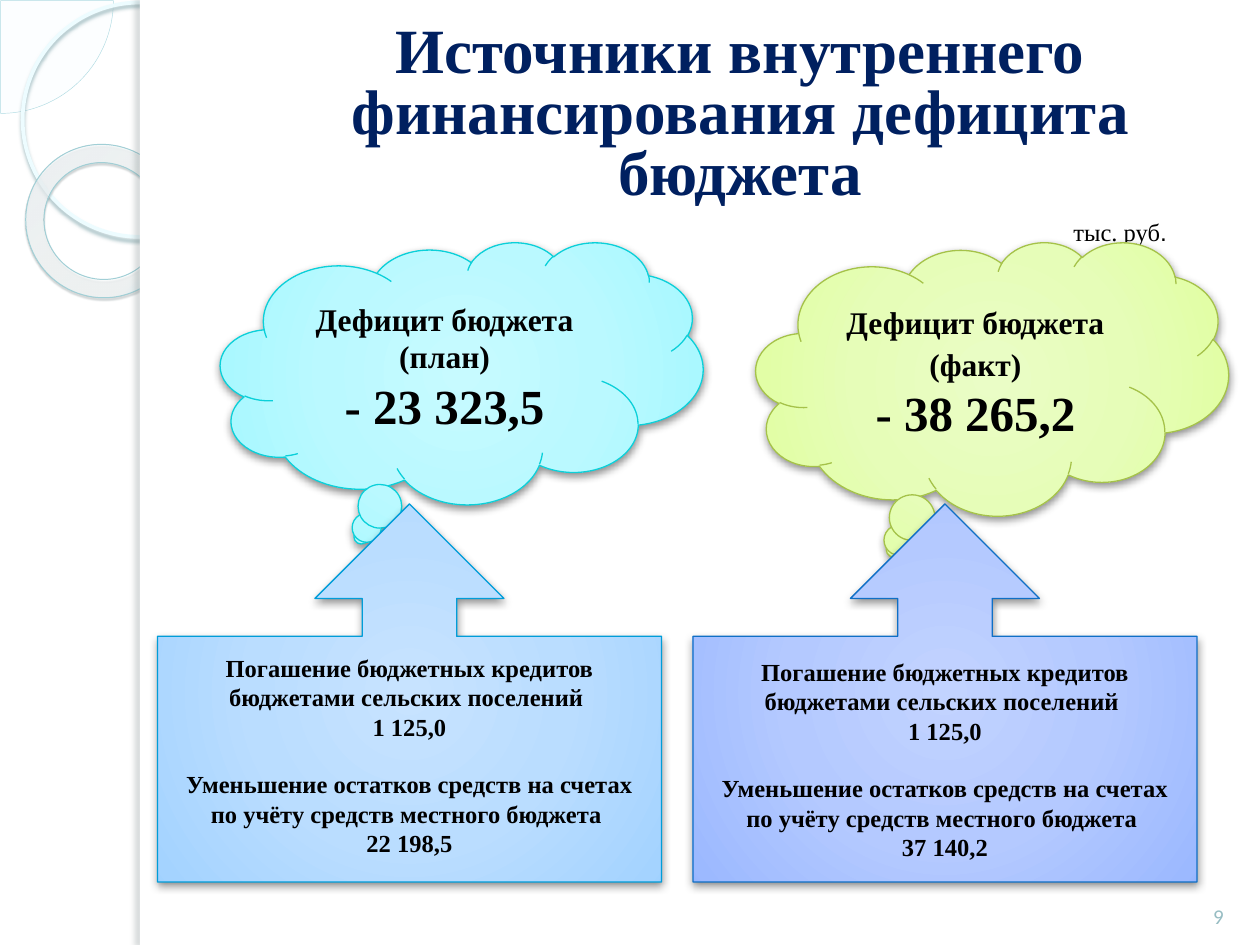
from dataclasses import dataclass

from lxml import etree
from pptx import Presentation
from pptx import util as u
from pptx.dml.color import RGBColor
from pptx.enum import shapes, text
from pptx.oxml.ns import qn

Inches, Pt = u.Inches, u.Pt
Kind = shapes.MSO_SHAPE
CENTER = text.PP_ALIGN.CENTER
MIDDLE = text.MSO_ANCHOR.MIDDLE
CENTRE_FOCUS = (50, 50, 50, 50)


@dataclass(frozen=True)
class Theme:
    serif: str = "Times New Roman"
    sans: str = "Calibri"
    symbol: str = "Arial"
    white: str = "FFFFFF"
    black: str = "000000"
    title: str = "002060"
    number: str = "97BDC3"
    title_size: int = 36
    amount_size: int = 28
    heading_size: int = 18
    body_size: int = 14
    number_size: int = 12
    # outline colour, then gradient colours from the centre outwards
    cyan: tuple = ("0BD0D9", "C7FAFF", "BAF9FF", "A5F8FF", "9EF7FF")
    green: tuple = ("A5C249", "EAFDC6", "E6FDB8", "E0FF9F", "DEFF98")
    sky: tuple = ("009DD9", "C7E3FF", "BADDFF", "A4D3FF", "9ED0FF")
    blue: tuple = ("0F6FC6", "C2D3FF", "B4C9FF", "9CB9FF", "95B4FF")
    # colour, opacity %, blur pt, distance pt, direction in degrees
    soft_shadow: tuple = ("000000", 43, 5, 2, 90)


def add_color(parent, color, opacity):
    element = etree.SubElement(parent, qn("a:srgbClr"), val=color)
    etree.SubElement(element, qn("a:alpha"), val=str(opacity * 1000))


class SlideBuilder:
    def __init__(self, slide, theme):
        self.slide = slide
        self.theme = theme

    def shape(self, kind, box, fill=None, line=None, width=0.75, shadow=None):
        shape = self.slide.shapes.add_shape(kind, *map(Inches, box))
        if fill:
            shape.fill.solid()
            shape.fill.fore_color.rgb = RGBColor.from_string(fill)
        else:
            shape.fill.background()
        if line:
            shape.line.color.rgb = RGBColor.from_string(line)
            shape.line.width = Pt(width)
        else:
            shape.line.fill.background()
        shape.shadow.inherit = False
        if shadow:
            self.shadow(shape, *shadow)
        return shape

    def shadow(self, shape, color, opacity, blur, distance, angle):
        effects = shape._element.spPr.find(qn("a:effectLst"))
        outer = etree.SubElement(
            effects, qn("a:outerShdw"), blurRad=str(Pt(blur)), dist=str(Pt(distance)),
            dir=str(angle * 60000), algn="ctr", rotWithShape="0")
        add_color(outer, color, opacity)

    def radial_fill(self, shape, stops, focus=CENTRE_FOCUS):
        """Stops are (position %, colour, opacity %); focus is left, top, right, bottom in %."""
        shape.fill.gradient()
        gradient = shape._element.spPr.find(qn("a:gradFill"))
        for child in list(gradient):
            gradient.remove(child)
        stop_list = etree.SubElement(gradient, qn("a:gsLst"))
        for position, color, opacity in stops:
            stop = etree.SubElement(stop_list, qn("a:gs"), pos=str(position * 1000))
            add_color(stop, color, opacity)
        circle = etree.SubElement(gradient, qn("a:path"), path="circle")
        edges = {side: str(value * 1000) for side, value in zip("ltrb", focus)}
        etree.SubElement(circle, qn("a:fillToRect"), **edges)

    def set_lines(self, shape, lines, color, font=None, bold=True, anchor=MIDDLE, align=CENTER):
        """Lines are (wording, size in pt, space before in pt)."""
        frame = shape.text_frame
        frame.word_wrap = True
        frame.vertical_anchor = anchor
        for index, (wording, size, gap) in enumerate(lines):
            paragraph = frame.add_paragraph() if index else frame.paragraphs[0]
            paragraph.text = wording
            paragraph.alignment = align
            paragraph.space_before = Pt(gap)
            paragraph.font.name = font or self.theme.serif
            paragraph.font.size = Pt(size)
            paragraph.font.bold = bold
            paragraph.font.color.rgb = RGBColor.from_string(color)
        return frame

    def text_box(self, box, wording, size, color, **style):
        shape = self.slide.shapes.add_textbox(*map(Inches, box))
        return self.set_lines(shape, [(wording, size, 0)], color, **style)

    def callout(self, kind, box, palette, lines):
        outline, *colors = palette
        shape = self.shape(kind, box, line=outline, shadow=self.theme.soft_shadow)
        self.radial_fill(shape, [(p, c, 100) for p, c in zip((0, 50, 97, 100), colors)])
        return self.set_lines(shape, lines, self.theme.black)

    def cloud(self, box, palette, label, amount, gap=0):
        theme = self.theme
        self.callout(Kind.CLOUD_CALLOUT, box, palette, [
            ("Дефицит бюджета", theme.heading_size, 0),
            (label, theme.heading_size, gap),
            (amount, theme.amount_size, 0)])

    def source_arrow(self, left, palette, balance):
        size = self.theme.body_size
        return self.callout(Kind.UP_ARROW_CALLOUT, (left, 4, 4, 3), palette, [
            ("Погашение бюджетных кредитов бюджетами сельских поселений ", size, 0),
            ("1 125,0", size, 0),
            ("Уменьшение остатков средств на счетах по учёту средств местного бюджета ",
             size, 16),
            (balance, size, 0)])

    def side_ornament(self):
        white = self.theme.white
        quarter = self.shape(Kind.PIE, (-0.89, -0.89, 1.79, 1.79), "F8FEFF", "AFDBE2", 0.25)
        quarter.adjustments[0], quarter.adjustments[1] = 0, 54
        quarter_color = quarter._element.spPr.find(qn("a:solidFill")).find(qn("a:srgbClr"))
        etree.SubElement(quarter_color, qn("a:alpha"), val="33000")
        self.shape(Kind.OVAL, (0.18, 0.02, 1.86, 1.86), line="EDFCFF", width=2.15,
                   shadow=("9CB9BE", 85, 2, 2, 90))
        ring = self.shape(Kind.DONUT, (0.2, 1.15, 1.23, 1.21), line="A1CFD6", width=0.58,
                          shadow=("4B5E61", 35, 1, 1.2, 75))
        ring.adjustments[0] = 0.12
        ring.rotation = 38.6
        self.radial_fill(ring, [(0, "F9FEFF", 70), (70, "FDFFFF", 55), (100, "9EF2FF", 60)],
                         (-408, -50, 508, 150))
        self.shape(Kind.RECTANGLE, (1.11, 0, 8.89, 7.5), white)
        self.shape(Kind.RECTANGLE, (1.11, 0, 0.08, 7.5), white,
                   shadow=("6C7A7C", 25, 3, 3, 180))


def main():
    presentation = Presentation()
    presentation.slide_width, presentation.slide_height = Inches(10), Inches(7.5)
    theme = Theme()
    builder = SlideBuilder(
        presentation.slides.add_slide(presentation.slide_layouts[6]), theme)

    builder.side_ornament()
    title = builder.text_box(
        (2.25, 0.3, 7.25, 1.25), "Источники внутреннего финансирования дефицита бюджета",
        theme.title_size, theme.title)
    title.paragraphs[0].line_spacing = Pt(35)
    builder.text_box((9.42, 6.9, 0.5, 0.52), "9", theme.number_size, theme.number,
                     font=theme.sans, bold=False, anchor=text.MSO_ANCHOR.BOTTOM)
    unit = builder.text_box((8.42, 1.67, 0.95, 0.34), "тыс. руб", theme.body_size,
                            theme.black, bold=False, anchor=text.MSO_ANCHOR.TOP,
                            align=text.PP_ALIGN.LEFT)
    unit.word_wrap = False
    full_stop = unit.paragraphs[0].add_run()
    full_stop.text = "."
    full_stop.font.name = theme.symbol

    builder.cloud((1.75, 1.92, 3.83, 2.08), theme.cyan, "(план)", "- 23 323,5")
    builder.cloud((6, 1.92, 3.75, 2.17), theme.green, "(факт)", "- 38 265,2", gap=2)
    builder.source_arrow(5.5, theme.blue, "37 140,2")
    plan = builder.source_arrow(1.25, theme.sky, "22 198,5")
    plan.margin_bottom = Inches(0.11)

    presentation.save("out.pptx")


if __name__ == "__main__":
    main()
